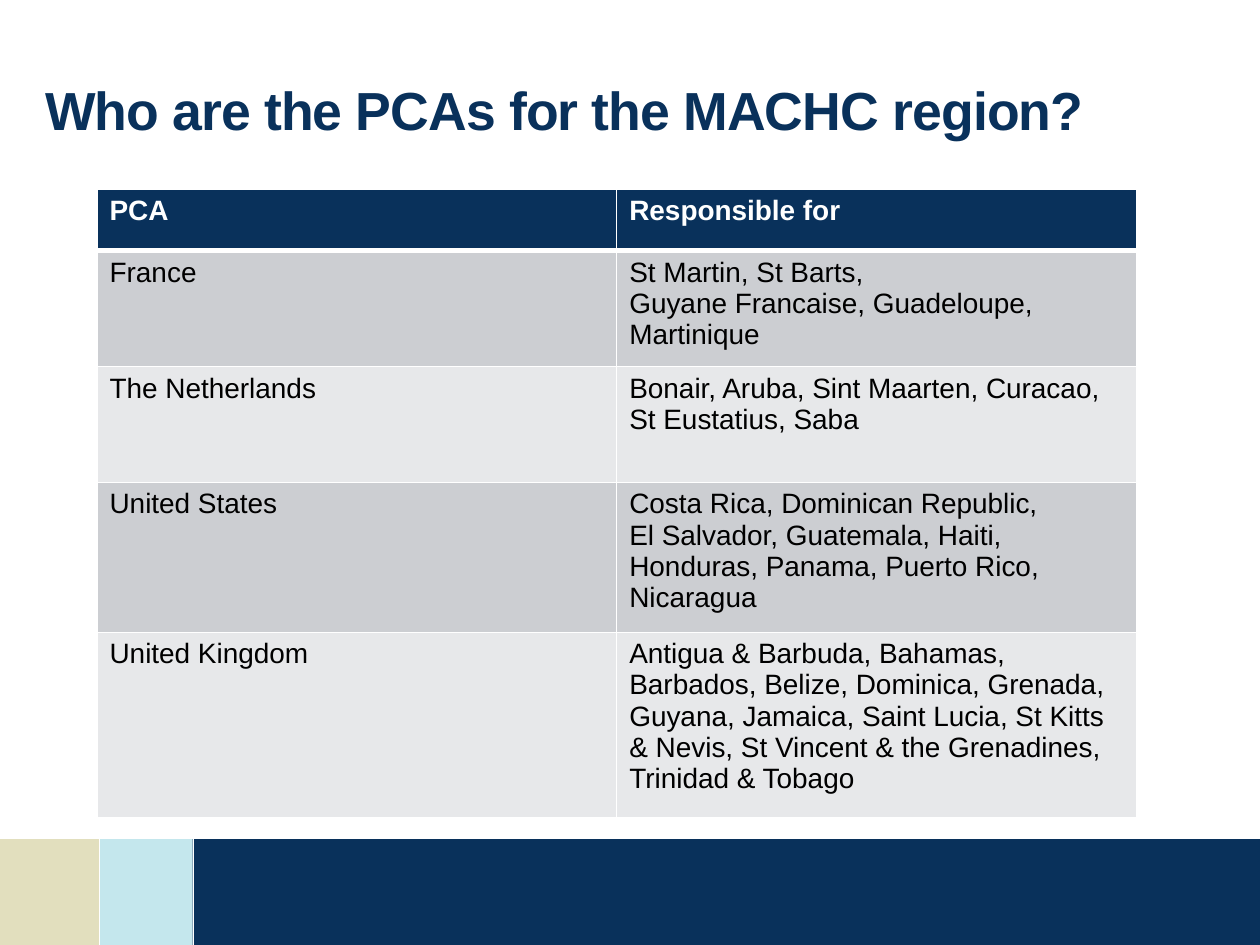
from dataclasses import dataclass

from lxml import etree
from pptx import Presentation
from pptx.dml.color import RGBColor
from pptx.enum import shapes, text
from pptx.oxml import ns
from pptx.util import Inches, Pt


@dataclass(frozen=True)
class Theme:
    font: str = "Arial"
    navy: str = "09315B"
    sand: str = "E2DFBE"
    aqua: str = "C4E7ED"
    white: str = "FFFFFF"
    black: str = "000000"
    bands: tuple = ("CCCED2", "E7E8EA")
    title_size: float = 30.6
    table_size: float = 16


THEME = Theme()

HEADER = ("PCA", "Responsible for")
AUTHORITIES = (
    ("France", "St Martin, St Barts,\nGuyane Francaise, Guadeloupe, Martinique"),
    ("The Netherlands", "Bonair, Aruba, Sint Maarten, Curacao,\nSt Eustatius, Saba"),
    ("United States", "Costa Rica, Dominican Republic,\nEl Salvador, Guatemala, Haiti,\n"
                      "Honduras, Panama, Puerto Rico, Nicaragua"),
    ("United Kingdom", "Antigua & Barbuda, Bahamas, Barbados, Belize, Dominica, Grenada, "
                       "Guyana, Jamaica, Saint Lucia, St Kitts & Nevis, "
                       "St Vincent & the Grenadines, Trinidad & Tobago"),
)
ROW_HEIGHTS = (0.49, 0.92, 0.92, 1.19, 1.47)


def color(value):
    return RGBColor.from_string(value)


def style_text(text_frame, size, value, bold):
    for paragraph in text_frame.paragraphs:
        for run in paragraph.runs:
            run.font.name = THEME.font
            run.font.size = Pt(size)
            run.font.bold = bold
            run.font.color.rgb = color(value)


def add_footer(slide, left, top, width, height):
    """Three colour blocks, with a fine white line at each seam."""
    seams = (left + 0.79, left + 1.53)
    edges = (left, *seams, left + width)
    fills = (THEME.sand, THEME.aqua, THEME.navy)
    for start, end, fill in zip(edges, edges[1:], fills):
        block = slide.shapes.add_shape(
            shapes.MSO_SHAPE.RECTANGLE,
            Inches(start), Inches(top), Inches(end - start), Inches(height))
        block.shadow.inherit = False
        block.fill.solid()
        block.fill.fore_color.rgb = color(fill)
        block.line.fill.background()
    for seam in seams:
        line = slide.shapes.add_connector(
            shapes.MSO_CONNECTOR.STRAIGHT,
            Inches(seam), Inches(top - 0.07), Inches(seam), Inches(top + height))
        line.line.color.rgb = color(THEME.white)
        line.line.width = Pt(0.25)
        etree.SubElement(line._element.spPr, ns.qn("a:effectLst"))


def add_title(slide, left, top, width, height):
    box = slide.shapes.add_textbox(Inches(left), Inches(top), Inches(width), Inches(height))
    frame = box.text_frame
    frame.word_wrap = True
    frame.vertical_anchor = text.MSO_ANCHOR.MIDDLE
    frame.text = "Who are the PCAs for the MACHC region?"
    frame.paragraphs[0].line_spacing = 0.9
    style_text(frame, THEME.title_size, THEME.navy, True)
    frame.paragraphs[0].runs[0].font._element.set("spc", "-50")


def set_borders(cell, top, bottom):
    """White borders; top and bottom widths in points, sides 1 point."""
    properties = cell._tc.get_or_add_tcPr()
    for side, width in (("L", 1), ("R", 1), ("T", top), ("B", bottom)):
        line = etree.SubElement(properties, ns.qn(f"a:ln{side}"), w=str(Pt(width)))
        fill = etree.SubElement(line, ns.qn("a:solidFill"))
        etree.SubElement(fill, ns.qn("a:srgbClr"), val=THEME.white)


def add_authority_table(slide, left, top, width, height):
    rows = (HEADER, *AUTHORITIES)
    table = slide.shapes.add_table(
        len(rows), len(HEADER),
        Inches(left), Inches(top), Inches(width), Inches(height)).table
    for column in table.columns:
        column.width = Inches(width / len(HEADER))
    for index, (row, row_height) in enumerate(zip(rows, ROW_HEIGHTS)):
        table.rows[index].height = Inches(row_height)
        is_header = index == 0
        fill = THEME.navy if is_header else THEME.bands[(index - 1) % 2]
        for cell, content in zip(table.rows[index].cells, row):
            cell.text_frame.text = content
            style_text(cell.text_frame, THEME.table_size,
                       THEME.white if is_header else THEME.black, is_header)
            set_borders(cell, top=3 if index == 1 else 1, bottom=3 if is_header else 1)
            cell.fill.solid()
            cell.fill.fore_color.rgb = color(fill)


def main():
    presentation = Presentation()
    presentation.slide_width = Inches(10)
    presentation.slide_height = Inches(7.5)
    slide = presentation.slides.add_slide(presentation.slide_layouts[6])
    add_footer(slide, 0, 6.66, 10, 0.84)
    add_title(slide, 0.26, 0.44, 9.03, 0.92)
    add_authority_table(slide, 0.77, 1.5, 8.25, sum(ROW_HEIGHTS))
    presentation.save("out.pptx")


if __name__ == "__main__":
    main()
